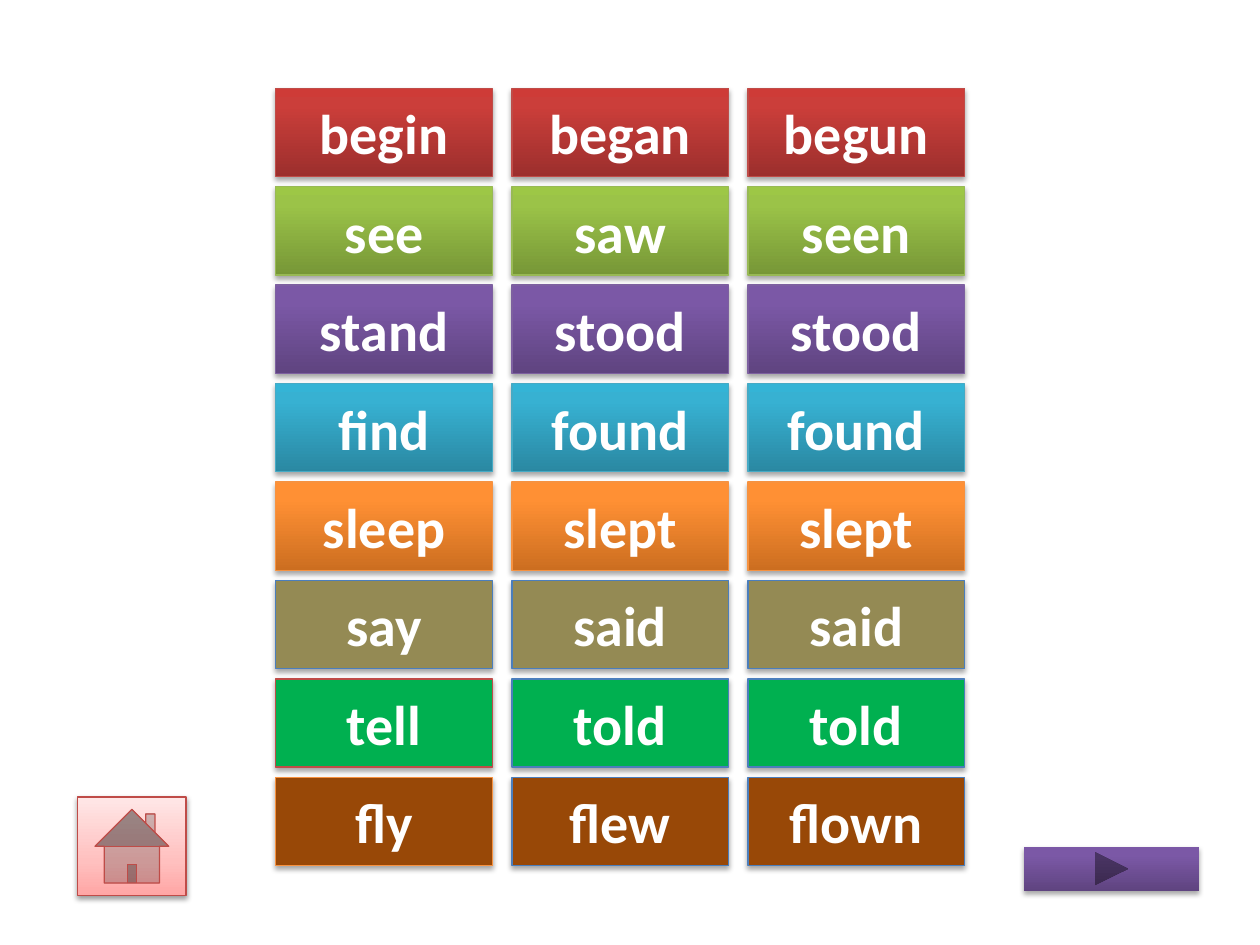
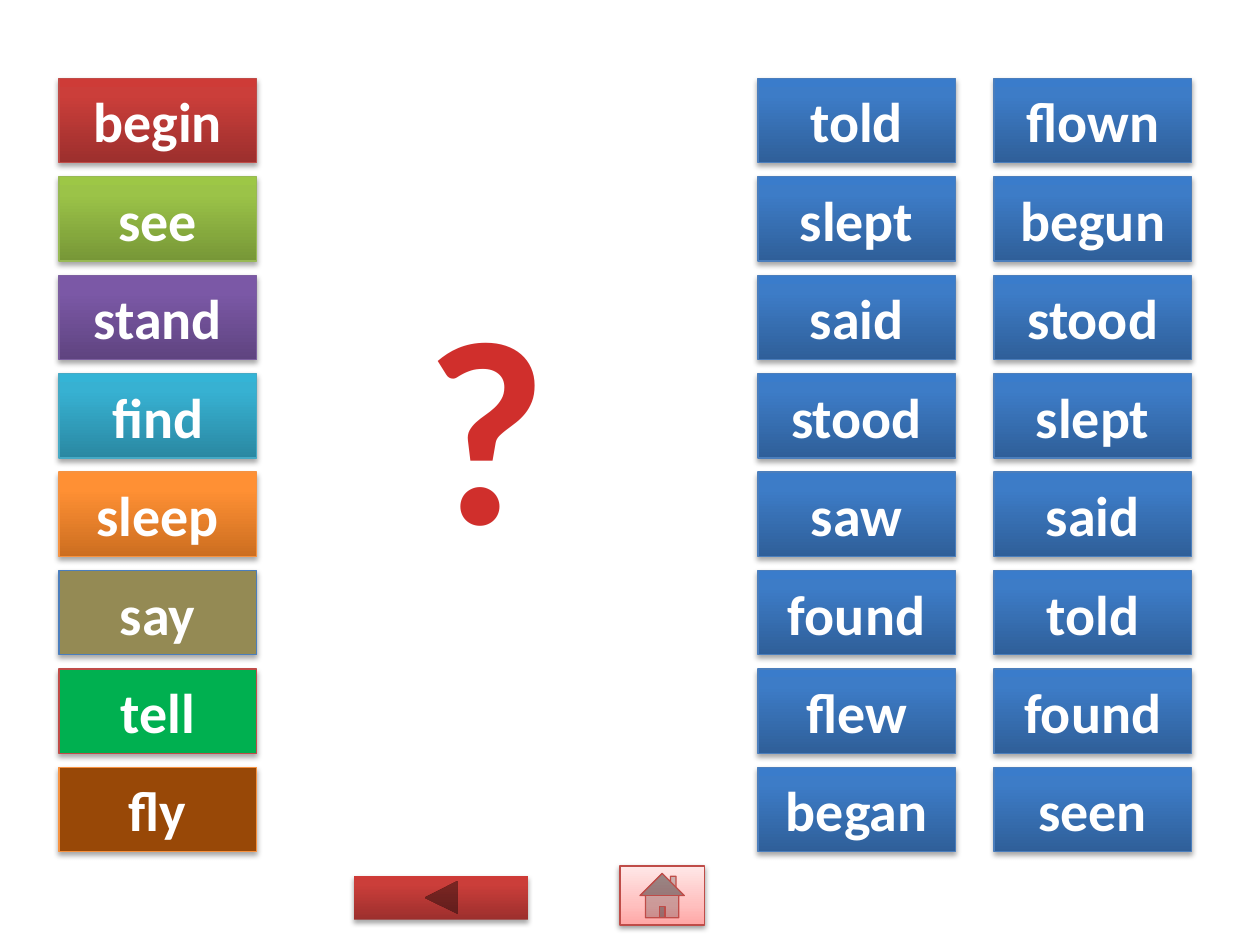
from dataclasses import dataclass

from pptx import Presentation
from pptx.dml.color import RGBColor
from pptx.enum.shapes import MSO_SHAPE as Preset
from pptx.enum.text import MSO_ANCHOR as Anchor, PP_ALIGN as Align
from pptx.oxml import parse_xml
from pptx.oxml.ns import nsdecls, qn
from pptx.util import Cm, Pt

VERBS = [
    ("red", ("begin", "began", "begun")),
    ("green", ("see", "saw", "seen")),
    ("purple", ("stand", "stood", "stood")),
    ("cyan", ("find", "found", "found")),
    ("orange", ("sleep", "slept", "slept")),
    ("olive", ("say", "said", "said")),
    ("emerald", ("tell", "told", "told")),
    ("brown", ("fly", "flew", "flown")),
]
SHUFFLED_PAST = ["told", "slept", "said", "stood", "saw", "found", "flew", "began"]
SHUFFLED_PARTICIPLES = ["flown", "begun", "stood", "slept", "said", "told", "found", "seen"]


@dataclass(frozen=True)
class Theme:
    font: str = "Calibri"
    tile_size: int = 32
    question_size: int = 150
    line_width: float = 0.75
    text: str = "FFFFFF"


THEME = Theme()
FILLS = {
    "red": [(0, "9C2F2D"), (80, "CB3E3A"), (100, "CE3B37")],
    "green": [(0, "779737"), (80, "9BC348"), (100, "9DC746")],
    "purple": [(0, "5F4480"), (80, "7B58A6"), (100, "7C57A8")],
    "cyan": [(0, "2A88A2"), (80, "37B1D2"), (100, "34B4D6")],
    "orange": [(0, "CC6E20"), (80, "FF9034"), (100, "FF9136")],
    "blue": [(0, "2F5F99"), (80, "3D7CC7"), (100, "3A7CCB")],
    "pink": [(0, "FFA6A5"), (35, "FFC0BF"), (100, "FFE7E7")],
    "question": [(0, "FC7C7A"), (75, "D02F2C"), (100, "C70500")],
    "olive": "948A54",
    "emerald": "00B050",
    "brown": "984807",
}
LINES = {
    "red": "BF4C48",
    "green": "98B955",
    "purple": "7D60A0",
    "cyan": "46AAC5",
    "orange": "F69240",
    "blue": "4B7EBC",
    "pink": "BF4C48",
}
BASE_FORM_LINES = {"emerald": "red", "brown": "orange"}

COLUMN_PITCH = 4.76
ROW_PITCH = 13.89 / (len(VERBS) - 1)


def apply_gradient(fill, owner, stops, angle):
    fill.gradient()
    fill.gradient_angle = angle
    stop_list = owner.find(qn("a:gradFill")).find(qn("a:gsLst"))
    for stop in list(stop_list):
        stop_list.remove(stop)
    for position, color in stops:
        stop_list.append(parse_xml(
            f'<a:gs {nsdecls("a")} pos="{position * 1000}"><a:srgbClr val="{color}"/></a:gs>'))


def add_shadow(shape, opacity, distance):
    shape.shadow.inherit = False
    effects = shape._element.spPr.find(qn("a:effectLst"))
    effects.append(parse_xml(
        f'<a:outerShdw {nsdecls("a")} blurRad="{Pt(3.1)}" dist="{Pt(distance)}" '
        f'dir="5400000" rotWithShape="0"><a:srgbClr val="000000">'
        f'<a:alpha val="{opacity * 1000}"/></a:srgbClr></a:outerShdw>'))


def add_block(slide, preset, box, fill_name, line_name=None, opacity=35, distance=1.8):
    shape = slide.shapes.add_shape(preset, *map(Cm, box))
    paint = FILLS[fill_name]
    if isinstance(paint, str):
        shape.fill.solid()
        shape.fill.fore_color.rgb = RGBColor.from_string(paint)
    else:
        apply_gradient(shape.fill, shape._element.spPr, paint, 90)
    if line_name:
        shape.line.color.rgb = RGBColor.from_string(LINES[line_name])
        shape.line.width = Pt(THEME.line_width)
    else:
        shape.line.fill.background()
    add_shadow(shape, opacity, distance)
    return shape


def write_text(shape, text, size):
    frame = shape.text_frame
    frame.text = text
    paragraph = frame.paragraphs[0]
    paragraph.alignment = Align.CENTER
    font = paragraph.runs[0].font
    font.name, font.size, font.bold = THEME.font, Pt(size), True
    return paragraph.runs[0]


def add_column(slide, left, top, size, words, fill_names, line_names):
    for row, (word, fill_name, line_name) in enumerate(zip(words, fill_names, line_names)):
        box = (left, top + row * ROW_PITCH, *size)
        tile = add_block(slide, Preset.RECTANGLE, box, fill_name, line_name)
        tile.text_frame.vertical_anchor = Anchor.MIDDLE
        run = write_text(tile, word, THEME.tile_size)
        run.font.color.rgb = RGBColor.from_string(THEME.text)


def add_verb_column(slide, left, top, size, form):
    names = [name for name, _ in VERBS]
    special = BASE_FORM_LINES if form == 0 else {}
    lines = [name if name in LINES else special.get(name, "blue") for name in names]
    add_column(slide, left, top, size, [forms[form] for _, forms in VERBS], names, lines)


def add_home_button(slide, box):
    add_block(slide, Preset.ACTION_BUTTON_HOME, box, "pink", "pink", 38, 1.6)


def build_forms_slide(slide):
    for form in range(3):
        add_verb_column(slide, 5.56 + form * COLUMN_PITCH, 1.78, (4.37, 1.78), form)
    add_block(slide, Preset.ACTION_BUTTON_FORWARD_OR_NEXT, (20.64, 17.07, 3.53, 0.89), "purple")
    add_home_button(slide, (1.57, 16.07, 2.18, 1.98))


def build_quiz_slide(slide):
    top, size = 1.58, (3.98, 1.7)
    add_verb_column(slide, 1.19, top, size, 0)
    blues = ["blue"] * len(VERBS)
    for column, words in enumerate((SHUFFLED_PAST, SHUFFLED_PARTICIPLES)):
        add_column(slide, 15.28 + column * COLUMN_PITCH, top, size, words, blues, blues)
    add_block(slide, Preset.ACTION_BUTTON_BACK_OR_PREVIOUS, (7.14, 17.65, 3.51, 0.89), "red")
    question = slide.shapes.add_textbox(*map(Cm, (7.92, 5.16, 3.76, 6.68)))
    question.text_frame.word_wrap = True
    run = write_text(question, "?", THEME.question_size)
    apply_gradient(run.font.fill, run._r.rPr, FILLS["question"], 270)
    add_home_button(slide, (12.5, 17.46, 1.7, 1.19))


def main():
    presentation = Presentation()
    presentation.slide_width, presentation.slide_height = Cm(25.4), Cm(19.05)
    for build in (build_forms_slide, build_quiz_slide):
        build(presentation.slides.add_slide(presentation.slide_layouts[6]))
    presentation.save("out.pptx")


if __name__ == "__main__":
    main()
